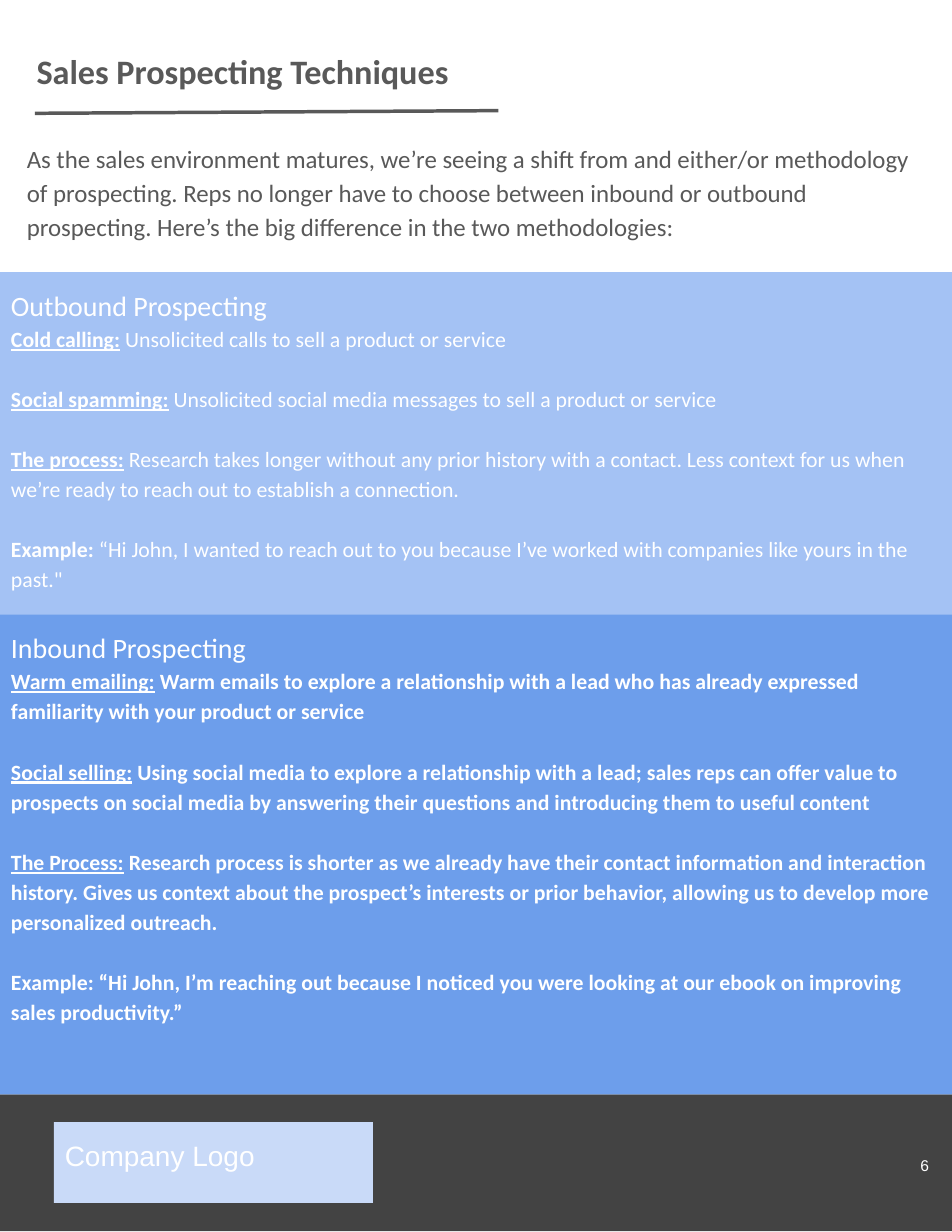
import pptx
import pptx.util
import pptx.dml.color
import pptx.enum.shapes
import pptx.enum.text
import pptx.oxml.ns
import lxml.etree

Cm, Pt = pptx.util.Cm, pptx.util.Pt
RGBColor = pptx.dml.color.RGBColor

WHITE = RGBColor(0xFF, 0xFF, 0xFF)
GREY = RGBColor(0x59, 0x59, 0x59)
DARK = RGBColor(0x43, 0x43, 0x43)
LIGHT_BLUE = RGBColor(0xA4, 0xC2, 0xF4)
BLUE = RGBColor(0x6D, 0x9E, 0xEB)
PALE_BLUE = RGBColor(0xC9, 0xDA, 0xF8)

PAGE_W, PAGE_H = 21.59, 27.94

prs = pptx.Presentation()
prs.slide_width, prs.slide_height = Cm(PAGE_W), Cm(PAGE_H)
s = prs.slides.add_slide(prs.slide_layouts[6])


def add_box(left, top, width, height, fill=None):
    """Add a text box with even insets and an optional fill."""
    sp = s.shapes.add_textbox(Cm(left), Cm(top), Cm(width), Cm(height))
    if fill is not None:
        sp.fill.solid()
        sp.fill.fore_color.rgb = fill
    tf = sp.text_frame
    tf.word_wrap = True
    tf.margin_left = tf.margin_right = tf.margin_top = tf.margin_bottom = Cm(0.25)
    return tf


def style(p, size, color, font="Calibri", after=0):
    """Set the font and spacing of a paragraph."""
    p.font.name, p.font.size, p.font.color.rgb = font, Pt(size), color
    p.line_spacing = 1.15
    p.space_after = Pt(after)


# Footer band
sp = s.shapes.add_shape(pptx.enum.shapes.MSO_SHAPE.RECTANGLE,
                        0, Cm(24.82), Cm(PAGE_W), Cm(3.1))
sp.shadow.inherit = False
sp.fill.solid()
sp.fill.fore_color.rgb = DARK
sp.line.fill.background()

# Title
p = add_box(0.58, 0.76, 10.77, 2.77, WHITE).paragraphs[0]
p.text = "Sales Prospecting Techniques"
style(p, 22, GREY)
p.font.bold = True

# Page number
tf = add_box(20.02, 25.32, 1.3, 2.13)
tf.vertical_anchor = pptx.enum.text.MSO_ANCHOR.MIDDLE
p = tf.paragraphs[0]
p.text = "6"
style(p, 10, WHITE, "Arial")
p.alignment = pptx.enum.text.PP_ALIGN.RIGHT

# Introduction
p = add_box(0.36, 2.9, 20.96, 4.93, WHITE).paragraphs[0]
p.text = ("As the sales environment matures, we’re seeing a shift from and either/or "
          "methodology of prospecting. Reps no longer have to choose between inbound or "
          "outbound prospecting. Here’s the big difference in the two methodologies:")
style(p, 16, GREY)

# Rule under the title
ln = s.shapes.add_connector(pptx.enum.shapes.MSO_CONNECTOR.STRAIGHT,
                            Cm(0.79), Cm(2.57), Cm(11.3), Cm(2.51))
ln.line.color.rgb = GREY
ln.line.width = Pt(2.25)
lxml.etree.SubElement(ln._element.spPr, pptx.oxml.ns.qn("a:effectLst"))

# Prospecting panels: top, height, fill, bold body, heading, (label, text) items
panels = [
    (6.17, 7.8, LIGHT_BLUE, False, "Outbound Prospecting", [
        ("Cold calling:", "Unsolicited calls to sell a product or service"),
        ("Social spamming:",
         "Unsolicited social media messages to sell a product or service"),
        ("The process:",
         "Research takes longer without any prior history with a contact. Less context "
         "for us when we’re ready to reach out to establish a connection."),
        ("Example:",
         "“Hi John, I wanted to reach out to you because I’ve worked with companies "
         "like yours in the past.\""),
    ]),
    (13.94, 10.88, BLUE, True, "Inbound Prospecting", [
        ("Warm emailing:",
         "Warm emails to explore a relationship with a lead who has already expressed "
         "familiarity with your product or service"),
        ("Social selling:",
         "Using social media to explore a relationship with a lead; sales reps can offer "
         "value to prospects on social media by answering their questions and "
         "introducing them to useful content"),
        ("The Process:",
         "Research process is shorter as we already have their contact information and "
         "interaction history. Gives us context about the prospect’s interests or prior "
         "behavior, allowing us to develop more personalized outreach."),
        ("Example:",
         "“Hi John, I’m reaching out because I noticed you were looking at our ebook on "
         "improving sales productivity.”"),
    ]),
]
for top, height, fill, bold, heading, items in panels:
    tf = add_box(0, top, PAGE_W, height, fill)
    p = tf.paragraphs[0]
    p.text = heading
    style(p, 18, WHITE)
    for label, text in items:
        p = tf.add_paragraph()
        style(p, 14, WHITE, after=19.35)
        r = p.add_run()
        r.text = label
        r.font.bold = True
        r.font.underline = label != "Example:"
        r = p.add_run()
        r.text = " " + text
        r.font.bold = bold

# Logo placeholder
p = add_box(1.22, 25.45, 7.24, 1.83, PALE_BLUE).paragraphs[0]
p.text = "Company Logo"
style(p, 18, WHITE, "Arial")

prs.save("out.pptx")
